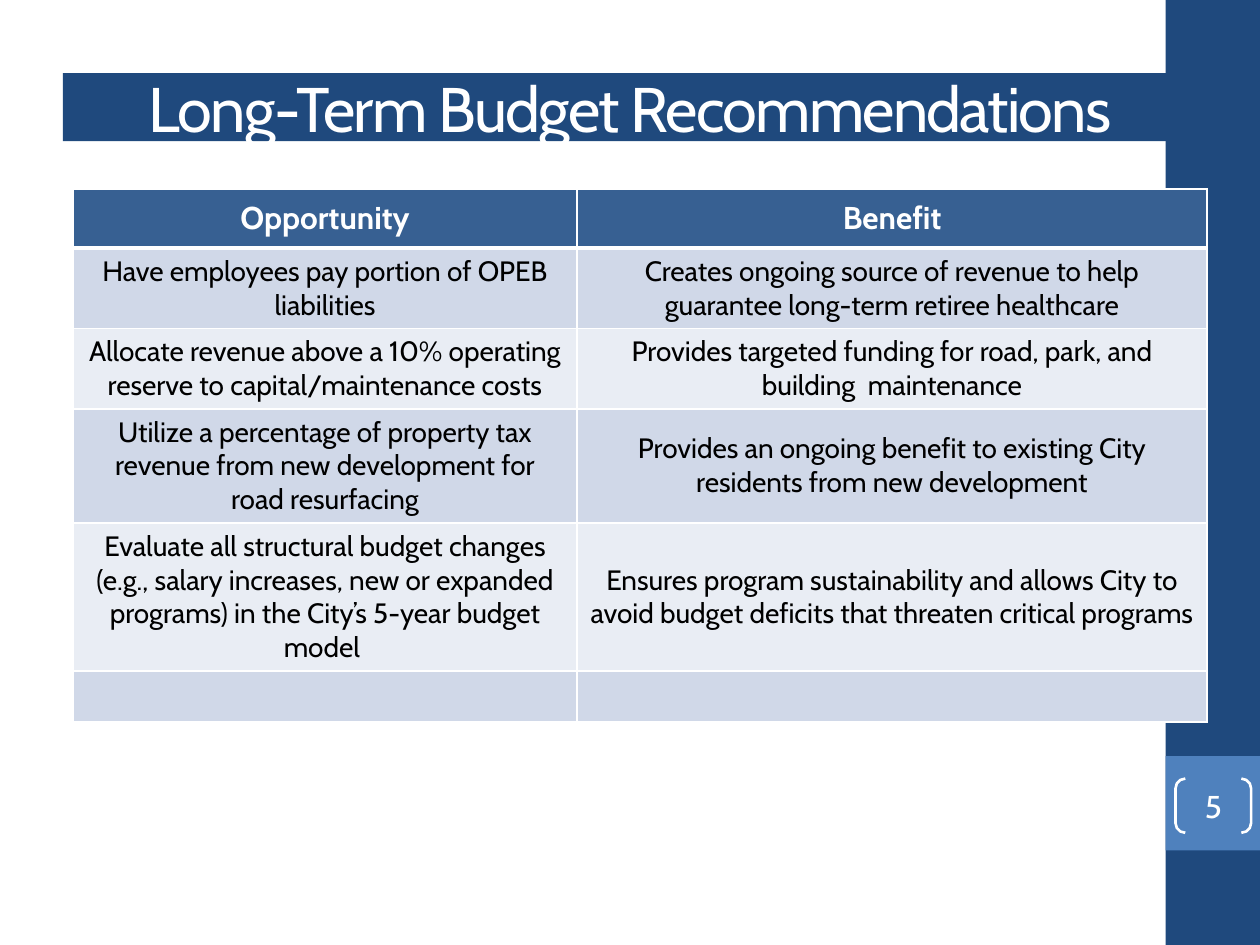
import pptx
import pptx.dml.color
import pptx.enum.shapes
import pptx.enum.text
import pptx.oxml
import pptx.oxml.ns
import pptx.util

Inches = pptx.util.Inches
Pt = pptx.util.Pt
MSO_SHAPE = pptx.enum.shapes.MSO_SHAPE
MIDDLE = pptx.enum.text.MSO_ANCHOR.MIDDLE

COLORS = {
    "navy": "1F497D",
    "blue": "4F81BD",
    "header": "376092",
    "band_dark": "D0D8E8",
    "band_light": "E9EDF4",
    "white": "FFFFFF",
    "black": "000000",
}
ROWS = [
    ("Opportunity", "Benefit"),
    ("Have employees pay portion of OPEB liabilities",
     "Creates ongoing source of revenue to help guarantee long-term retiree healthcare"),
    ("Allocate revenue above a 10% operating reserve to capital/maintenance costs",
     "Provides targeted funding for road, park, and building  maintenance"),
    ("Utilize a percentage of property tax revenue from new development for road resurfacing",
     "Provides an ongoing benefit to existing City residents from new development"),
    ("Evaluate all structural budget changes (e.g., salary increases, new or expanded "
     "programs) in the City’s 5-year budget model ",
     "Ensures program sustainability and allows City to avoid budget deficits that "
     "threaten critical programs"),
    ("", ""),
]
ROW_HEIGHTS = [0.47, 0.63, 0.56, 0.56, 0.56, 0.39]
COLUMN_WIDTHS = [4, 5]


def add_block(kind, left, top, width, height, fill=None):
    """Add a shape without shadow or line, filled if a colour name is given."""
    shape = slide.shapes.add_shape(
        kind, Inches(left), Inches(top), Inches(width), Inches(height))
    shape.shadow.inherit = False
    shape.line.fill.background()
    if fill:
        shape.fill.solid()
        shape.fill.fore_color.rgb = pptx.dml.color.RGBColor.from_string(COLORS[fill])
    else:
        shape.fill.background()
    return shape


def write_centered(text_frame, text, size, color, bold=False):
    text_frame.text = text
    paragraph = text_frame.paragraphs[0]
    paragraph.alignment = pptx.enum.text.PP_ALIGN.CENTER
    for run in paragraph.runs:
        run.font.name = "Cabin"
        run.font.size = Pt(size)
        run.font.bold = bold
        run.font.color.rgb = pptx.dml.color.RGBColor.from_string(COLORS[color])


presentation = pptx.Presentation()
presentation.slide_width = Inches(10)
presentation.slide_height = Inches(7.5)
slide = presentation.slides.add_slide(presentation.slide_layouts[6])

# Side band and title bar
add_block(MSO_SHAPE.RECTANGLE, 9.25, 0, 0.75, 7.5, "navy")
add_block(MSO_SHAPE.RECTANGLE, 9.25, 6, 0.75, 0.75, "blue")
title = add_block(MSO_SHAPE.RECTANGLE, 0.5, 0.58, 9, 0.54, "navy")
title.text_frame.vertical_anchor = MIDDLE
write_centered(title.text_frame, "Long-Term Budget Recommendations", 36, "white")
title.text_frame.paragraphs[0].runs[0].font._element.set("spc", "-100")

# Recommendations table
table = slide.shapes.add_table(
    len(ROWS), len(COLUMN_WIDTHS), Inches(0.58), Inches(1.5),
    Inches(sum(COLUMN_WIDTHS)), Inches(sum(ROW_HEIGHTS))).table
for column, width in zip(table.columns, COLUMN_WIDTHS):
    column.width = Inches(width)
for row, height in zip(table.rows, ROW_HEIGHTS):
    row.height = Inches(height)

for row_index, texts in enumerate(ROWS):
    is_header = row_index == 0
    if is_header:
        fill = "header"
    else:
        fill = "band_dark" if row_index % 2 else "band_light"
    for column_index, text in enumerate(texts):
        cell = table.cell(row_index, column_index)
        cell.vertical_anchor = MIDDLE
        write_centered(cell.text_frame, text, 18 if is_header else 16,
                       "white" if is_header else "black", is_header)
        cell.fill.solid()
        cell.fill.fore_color.rgb = pptx.dml.color.RGBColor.from_string(COLORS[fill])
        border_widths = {
            "lnL": 1,
            "lnR": 1,
            "lnT": 3 if row_index == 1 else 1,
            "lnB": 3 if is_header else 1,
        }
        properties = cell._tc.get_or_add_tcPr()
        for position, (side, width) in enumerate(border_widths.items()):
            border = pptx.oxml.parse_xml(
                f'<a:{side} {pptx.oxml.ns.nsdecls("a")} w="{Pt(width)}"><a:solidFill>'
                f'<a:srgbClr val="{COLORS["white"]}"/></a:solidFill></a:{side}>')
            properties.insert(position, border)

# Page number
page_number = add_block(MSO_SHAPE.DOUBLE_BRACKET, 9.33, 6.18, 0.6, 0.43)
page_number.adjustments[0] = 0.18
page_number.line.color.rgb = pptx.dml.color.RGBColor.from_string(COLORS["white"])
page_number.line.width = Pt(1.5)
frame = page_number.text_frame
frame.margin_left = frame.margin_right = frame.margin_top = frame.margin_bottom = 0
frame.vertical_anchor = MIDDLE
write_centered(frame, "5", 18, "white")

presentation.save("out.pptx")
